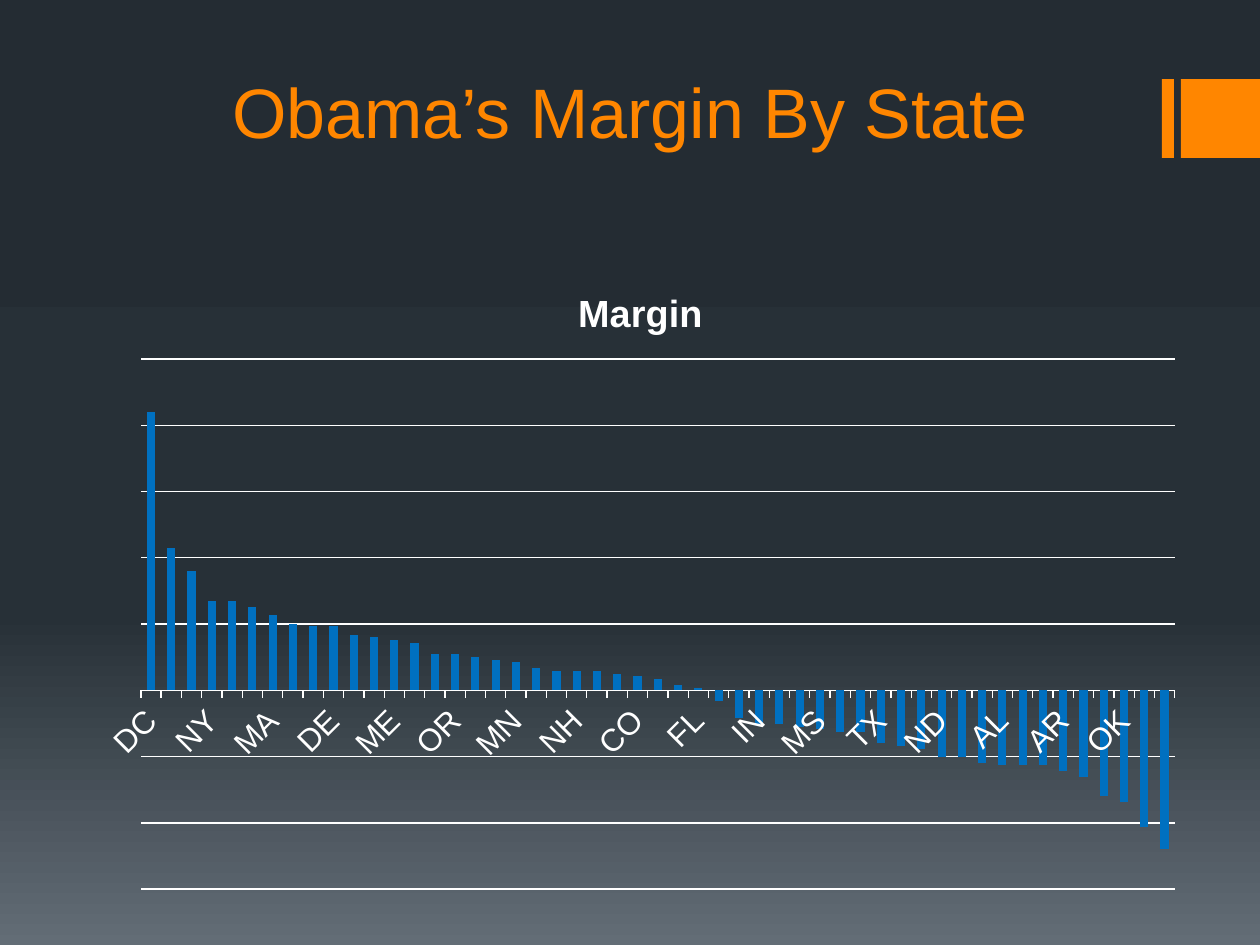
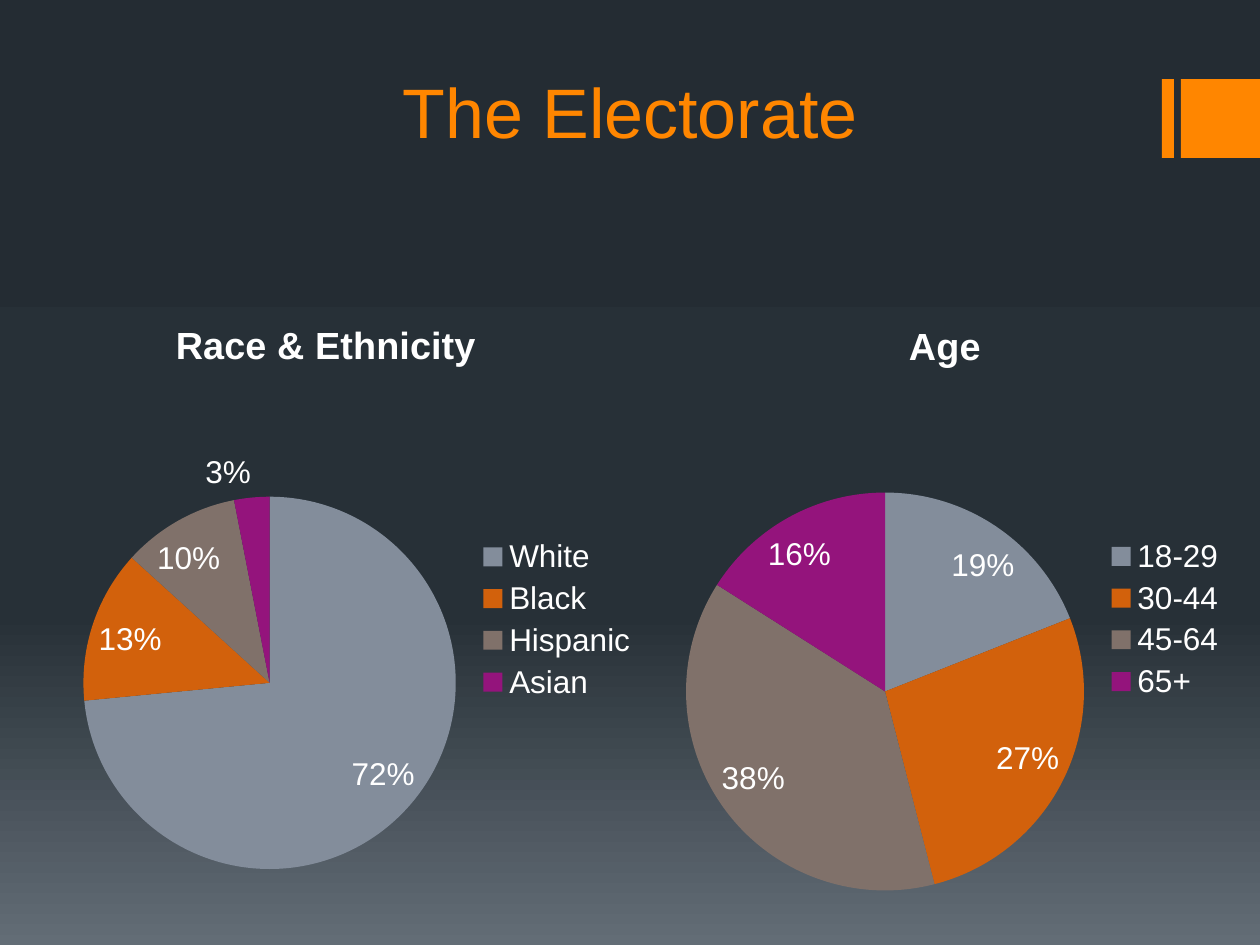
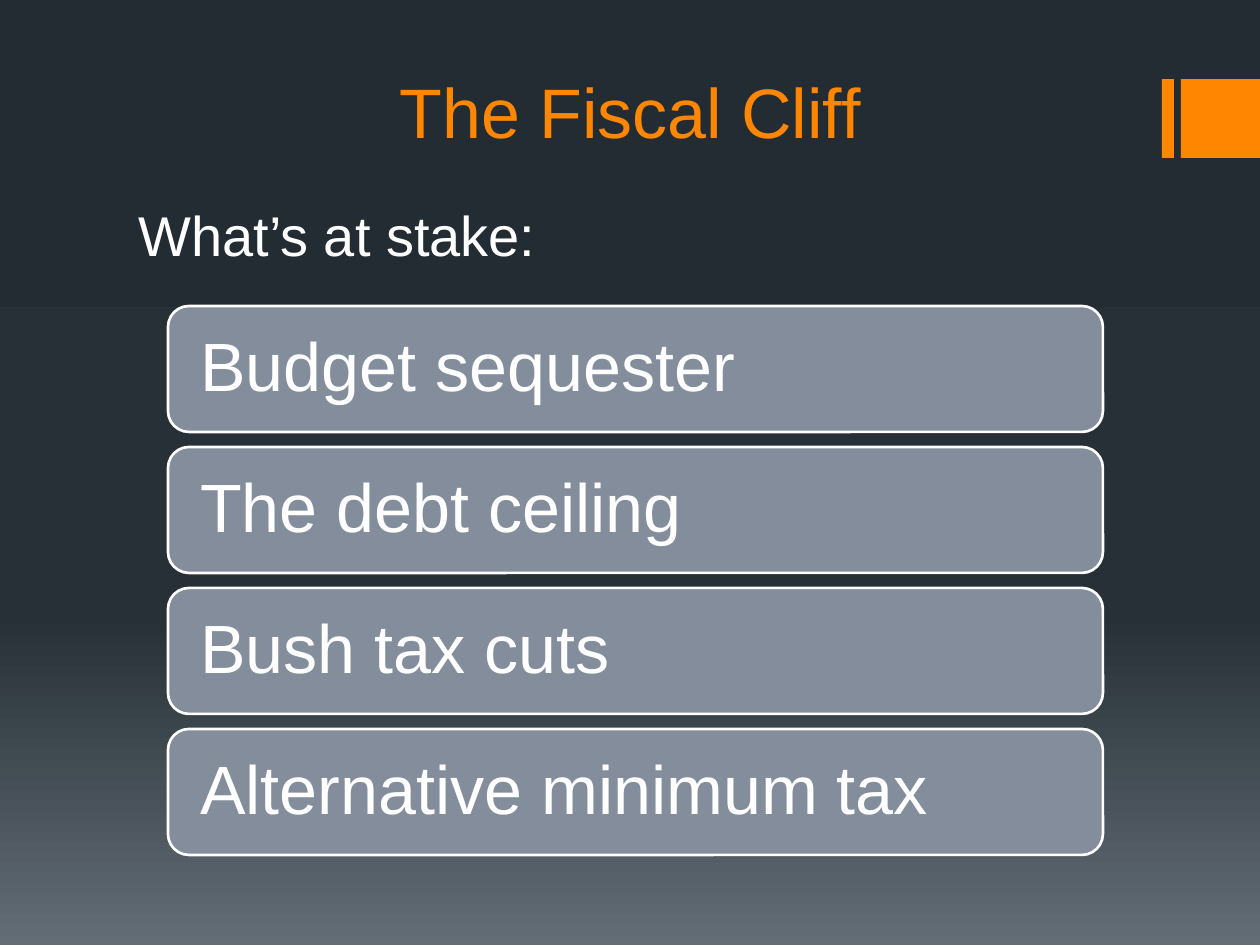
from copy import deepcopy

from pptx import Presentation
from pptx.chart.data import CategoryChartData
from pptx.dml.color import RGBColor
from pptx.enum.chart import XL_CHART_TYPE as ChartType
from pptx.enum.chart import XL_LABEL_POSITION as LabelPosition
from pptx.enum.chart import XL_LEGEND_POSITION as LegendPosition
from pptx.enum.chart import XL_TICK_MARK as TickMark
from pptx.enum.shapes import MSO_SHAPE as Preset
from pptx.enum.text import MSO_ANCHOR as Anchor
from pptx.enum.text import PP_ALIGN as Align
from pptx.util import Emu, Pt

FONT = "Arial"
COLORS = {
    "orange": "FF8600",
    "white": "FFFFFF",
    "blue": "0070C0",
    "slate": "838D9B",
    "rust": "D2610C",
    "taupe": "80716A",
    "purple": "94147C",
}
BACKDROP = [(0, "242C33"), (0.65, "273037"), (1, "636D76")]
PIE_COLORS = ["slate", "rust", "taupe", "purple"]

TITLE_BOX = (126, 0, 1008, 159)
ACCENT_BARS = [(1162, 79, 12, 79), (1181, 79, 79, 79)]

MARGIN_TITLE = "Obama’s Margin By State"
MARGIN_BOX = (84, 262, 1113, 640)
MARGIN_STEP = 23.8
MARGINS = {
    "DC": 100, "HI": 51, "VT": 43, "NY": 32, "RI": 32, "MD": 30, "MA": 27,
    "CA": 24, "CT": 23, "DE": 23, "NJ": 20, "IL": 19, "ME": 18, "WA": 17,
    "AZ": 13, "OR": 13, "NM": 12, "MI": 11, "MN": 10, "WI": 8, "IA": 7,
    "NH": 7, "NV": 7, "PA": 6, "CO": 5, "VA": 4, "OH": 2, "FL": 1,
    "NC": -4, "GA": -10, "IN": -12, "MO": -12, "SC": -13, "MS": -14,
    "AK": -15, "MT": -15, "TX": -19, "LA": -20, "SD": -21, "ND": -24,
    "TN": -24, "KS": -26, "AL": -27, "KY": -27, "NE": -27, "AR": -29,
    "WV": -31, "ID": -38, "OK": -40, "WY": -49, "UT": -57,
}

ELECTORATE_TITLE = "The Electorate"
ELECTORATE = [
    ("Race & Ethnicity", (1, 294, 650, 651),
     {"White": 0.72, "Black": 0.13, "Hispanic": 0.1, "Asian": 0.03}),
    ("Age", (651, 295, 588, 648),
     {"18-29": 0.19, "30-44": 0.27, "45-64": 0.38, "65+": 0.16}),
]

CLIFF_TITLE = "The Fiscal Cliff"
STAKE_INTRO = "What’s at stake:"
STAKE_BOX = (126, 194, 546, 81)
STAKES = ["Budget sequester", "The debt ceiling", "Bush tax cuts", "Alternative minimum tax"]
CARD_LEFT, CARD_TOP, CARD_WIDTH, CARD_HEIGHT = 168, 306, 935, 126
CARD_PITCH, CARD_INSET = 141, 26


def px(length):
    return Emu(round(length * 914400 / 126))


def place(box):
    return [px(length) for length in box]


def color(name):
    return RGBColor.from_string(COLORS[name])


def style(font, size, name="white", bold=None):
    font.name = FONT
    font.size = Pt(size)
    font.bold = bold
    font.color.rgb = color(name)


def add_backdrop(master):
    fill = master.background.fill
    fill.gradient()
    fill.gradient_angle = 270
    stops = master.element.xpath("./p:cSld/p:bg//a:gsLst")[0]
    stops.insert(1, deepcopy(stops[0]))
    for stop, (position, hex_color) in zip(fill.gradient_stops, BACKDROP):
        stop.position = position
        stop.color.rgb = RGBColor.from_string(hex_color)


def add_accent_bars(slide, master):
    for shape_id, box in enumerate(ACCENT_BARS, 20):
        bar = slide.shapes.add_shape(Preset.RECTANGLE, *place(box))
        bar.shadow.inherit = False
        bar.fill.solid()
        bar.fill.fore_color.rgb = color("orange")
        bar.line.fill.background()
        bar._element.nvSpPr.cNvPr.set("id", str(shape_id))
        master.shapes._spTree.append(bar._element)


def add_slide(prs, text):
    slide = prs.slides.add_slide(prs.slide_layouts[5])
    title = slide.shapes.title
    title.left, title.top, title.width, title.height = place(TITLE_BOX)
    title.text_frame.text = text
    title.text_frame.vertical_anchor = Anchor.BOTTOM
    heading = title.text_frame.paragraphs[0]
    heading.alignment = Align.CENTER
    style(heading.font, 40, "orange")
    return slide


def add_titled_chart(slide, kind, name, box, values):
    data = CategoryChartData()
    data.categories = list(values)
    data.add_series(name, list(values.values()))
    chart = slide.shapes.add_chart(kind, *place(box), data).chart
    style(chart.font, 18)
    chart.chart_title.text_frame.text = name
    chart.chart_title.include_in_layout = False
    style(chart.chart_title.text_frame.paragraphs[0].font, 21.6, bold=True)
    return chart


def add_margins(slide):
    chart = add_titled_chart(slide, ChartType.COLUMN_CLUSTERED, "Margin", MARGIN_BOX, MARGINS)
    chart.has_legend = False
    plot = chart.plots[0]
    plot.gap_width = 150
    plot.vary_by_categories = False
    columns = plot.series[0]
    columns.invert_if_negative = False
    columns.format.fill.solid()
    columns.format.fill.fore_color.rgb = color("blue")

    states, scale = chart.category_axis, chart.value_axis
    states.major_tick_mark = TickMark.OUTSIDE
    scale.visible = False
    scale.has_major_gridlines = True
    scale.major_unit = MARGIN_STEP
    scale.minimum_scale = round(-3 * MARGIN_STEP, 2)
    scale.maximum_scale = 5 * MARGIN_STEP
    for line in (states.format.line, scale.major_gridlines.format.line):
        line.color.rgb = color("white")
        line.width = Pt(0.75)


def add_pie(slide, name, box, shares):
    chart = add_titled_chart(slide, ChartType.PIE, name, box, shares)
    chart.has_legend = True
    chart.legend.position = LegendPosition.RIGHT
    chart.legend.include_in_layout = False
    plot = chart.plots[0]
    plot.vary_by_categories = True
    plot.has_data_labels = True
    labels = plot.data_labels
    labels.show_value = True
    labels.show_percentage = False
    labels.number_format = "0%"
    labels.number_format_is_linked = False
    labels.position = LabelPosition.BEST_FIT
    for index, name in enumerate(PIE_COLORS):
        fill = plot.series[0].points[index].format.fill
        fill.solid()
        fill.fore_color.rgb = color(name)


def add_stakes(slide):
    for row, stake in enumerate(STAKES):
        box = (CARD_LEFT, CARD_TOP + row * CARD_PITCH, CARD_WIDTH, CARD_HEIGHT)
        card = slide.shapes.add_shape(Preset.ROUNDED_RECTANGLE, *place(box))
        card.shadow.inherit = False
        card.fill.solid()
        card.fill.fore_color.rgb = color("slate")
        card.line.color.rgb = color("white")
        card.line.width = Pt(1.5)
        frame = card.text_frame
        frame.text = stake
        frame.margin_left = frame.margin_right = px(CARD_INSET)
        frame.margin_top = frame.margin_bottom = px(CARD_INSET)
        frame.vertical_anchor = Anchor.MIDDLE
        label = frame.paragraphs[0]
        label.alignment = Align.LEFT
        label.line_spacing = 0.9
        style(label.font, 39)

    intro = slide.shapes.add_textbox(*place(STAKE_BOX)).text_frame
    intro.word_wrap = True
    intro.text = STAKE_INTRO
    style(intro.paragraphs[0].font, 32)


def main():
    prs = Presentation()
    prs.slide_width, prs.slide_height = px(1260), px(945)
    add_backdrop(prs.slide_master)

    margin_slide = add_slide(prs, MARGIN_TITLE)
    add_accent_bars(margin_slide, prs.slide_master)
    add_margins(margin_slide)

    electorate_slide = add_slide(prs, ELECTORATE_TITLE)
    for name, box, shares in ELECTORATE:
        add_pie(electorate_slide, name, box, shares)

    add_stakes(add_slide(prs, CLIFF_TITLE))
    prs.save("out.pptx")


if __name__ == "__main__":
    main()
